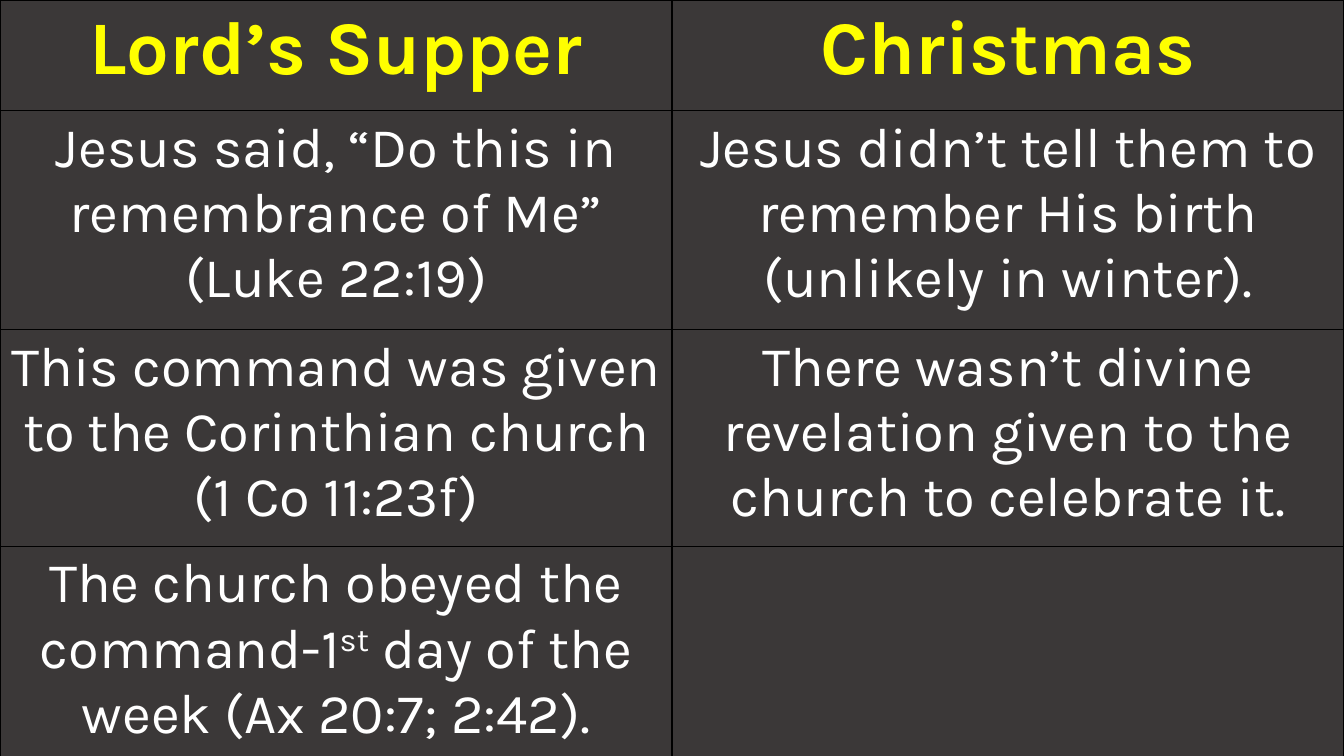
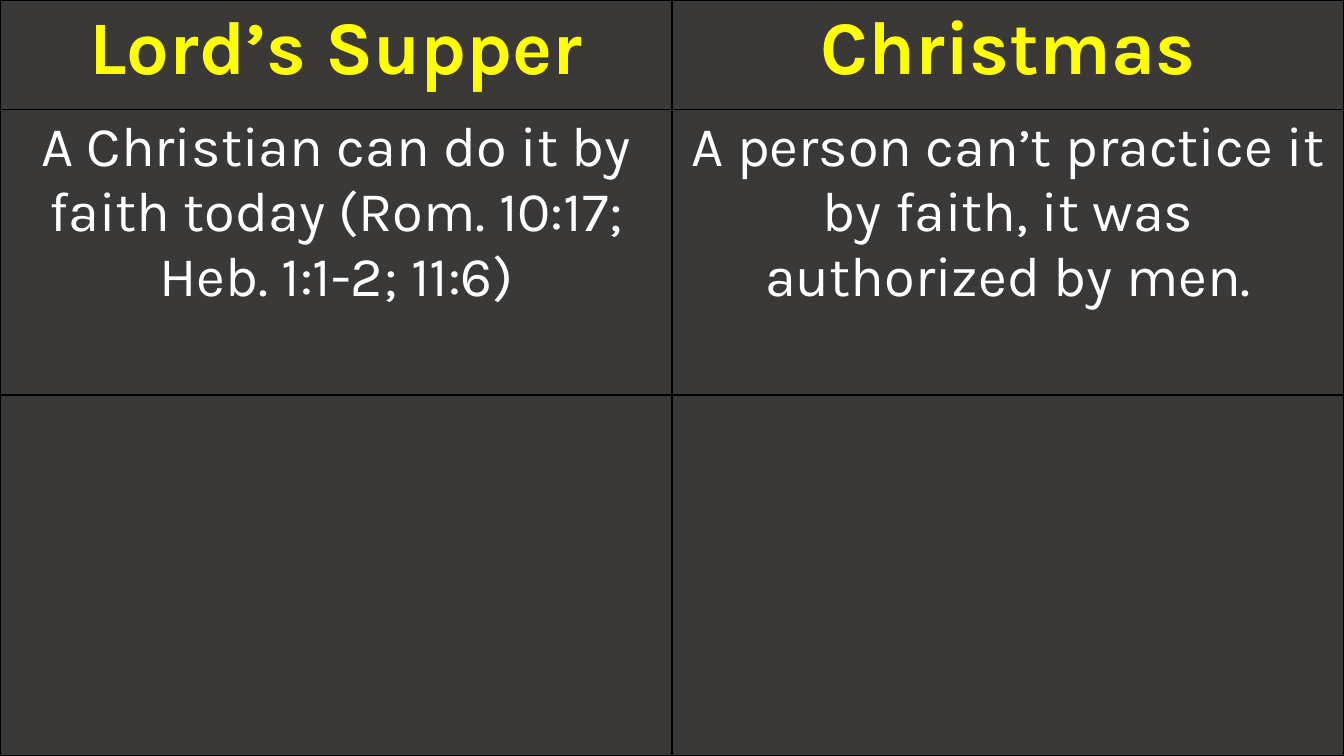
from dataclasses import dataclass

from lxml import etree
from pptx import Presentation
from pptx.dml.color import RGBColor
from pptx.enum.text import PP_ALIGN
from pptx.oxml.ns import qn
from pptx.util import Pt

SLIDE_WIDTH = 960
SLIDE_HEIGHT = 540
BLANK_LAYOUT = 6
CENTER = PP_ALIGN.CENTER

BLACK = RGBColor(0x00, 0x00, 0x00)
CHARCOAL = RGBColor(0x3B, 0x38, 0x38)
YELLOW = RGBColor(0xFF, 0xFF, 0x00)
WHITE = RGBColor(0xFF, 0xFF, 0xFF)

BORDER_SIDES = ("a:lnL", "a:lnR", "a:lnT", "a:lnB")
BORDER_WIDTH = 1
SUPERSCRIPT_BASELINE = "30000"


@dataclass(frozen=True)
class TextStyle:
    size: float
    color: RGBColor
    bold: bool
    font_name: str = "Karla"


@dataclass(frozen=True)
class Superscript:
    text: str


CellText = tuple[str | Superscript, ...]


@dataclass(frozen=True)
class ComparisonRow:
    height: float
    left: CellText = ()
    right: CellText = ()


HEADING = TextStyle(size=54, color=YELLOW, bold=True)
BODY = TextStyle(size=40, color=WHITE, bold=False)
HEADING_TEXTS: tuple[CellText, CellText] = (("Lord’s Supper",), ("Christmas",))


@dataclass(frozen=True)
class Comparison:
    heading_height: float
    rows: tuple[ComparisonRow, ...]


COMPARISONS = (
    Comparison(
        79.2,
        (
            ComparisonRow(
                156.4,
                ("Jesus said, “Do this in remembrance of Me” (Luke 22:19)",),
                ("Jesus didn’t tell them to remember His birth (unlikely in winter).",),
            ),
            ComparisonRow(
                154.8,
                ("This command was given to the Corinthian church (1 Co 11:23f)",),
                ("There wasn’t divine revelation given to the church to celebrate it.",),
            ),
            ComparisonRow(
                149.8,
                (
                    "The church obeyed the command-1",
                    Superscript("st"),
                    " day of the week (Ax 20:7; 2:42).",
                ),
            ),
        ),
    ),
    Comparison(
        78.4,
        (
            ComparisonRow(
                203.8,
                ("A Christian can do it by faith today (Rom. 10:17; Heb. 1:1-2; 11:6)",),
                ("A person can’t practice it by faith, it was authorized by men.",),
            ),
            ComparisonRow(257.8),
        ),
    ),
)


def add_borders(cell) -> None:
    properties = cell._tc.get_or_add_tcPr()
    for position, side in enumerate(BORDER_SIDES):
        line = etree.Element(qn(side), w=str(Pt(BORDER_WIDTH)))
        fill = etree.SubElement(line, qn("a:solidFill"))
        etree.SubElement(fill, qn("a:srgbClr"), val=str(BLACK))
        properties.insert(position, line)


def write_text(cell, text: CellText, style: TextStyle) -> None:
    paragraph = cell.text_frame.paragraphs[0]
    paragraph.alignment = CENTER
    font_format = {
        "name": style.font_name,
        "size": Pt(style.size),
        "bold": style.bold,
    }
    for part in text:
        run = paragraph.add_run()
        for attribute, value in font_format.items():
            setattr(run.font, attribute, value)
        run.font.color.rgb = style.color
        if isinstance(part, Superscript):
            run.text = part.text
            run._r.get_or_add_rPr().set("baseline", SUPERSCRIPT_BASELINE)
        else:
            run.text = part


def add_comparison(presentation, comparison: Comparison) -> None:
    """Add a slide filled by a two-column table under the shared headings."""
    slide = presentation.slides.add_slide(presentation.slide_layouts[BLANK_LAYOUT])
    background = slide.background.fill
    background.solid()
    background.fore_color.rgb = BLACK

    rows = (ComparisonRow(comparison.heading_height, *HEADING_TEXTS), *comparison.rows)
    table = slide.shapes.add_table(
        len(rows), 2, Pt(0), Pt(0), Pt(SLIDE_WIDTH), Pt(SLIDE_HEIGHT)
    ).table
    for row_index, row in enumerate(rows):
        table.rows[row_index].height = Pt(row.height)
        style = BODY if row_index else HEADING
        for column_index, text in enumerate((row.left, row.right)):
            cell = table.cell(row_index, column_index)
            cell.fill.solid()
            cell.fill.fore_color.rgb = CHARCOAL
            add_borders(cell)
            write_text(cell, text, style)


def main() -> None:
    presentation = Presentation()
    presentation.slide_width = Pt(SLIDE_WIDTH)
    presentation.slide_height = Pt(SLIDE_HEIGHT)
    for comparison in COMPARISONS:
        add_comparison(presentation, comparison)
    presentation.save("out.pptx")


if __name__ == "__main__":
    main()
